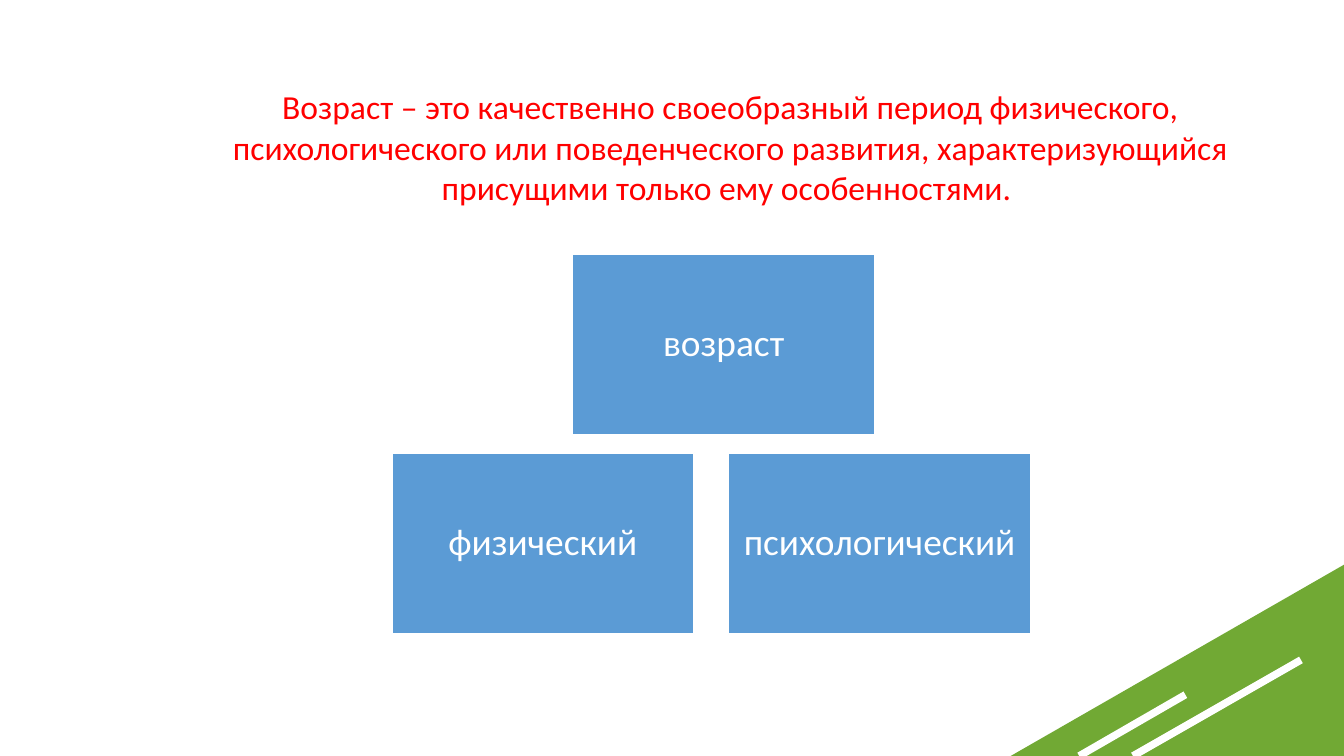
from dataclasses import dataclass

from lxml import etree
from pptx import Presentation
from pptx.dml.color import RGBColor
from pptx.enum.shapes import MSO_CONNECTOR, MSO_SHAPE
from pptx.enum.text import MSO_ANCHOR, PP_ALIGN
from pptx.oxml.ns import qn
from pptx.util import Inches, Pt

RECT, TRIANGLE = MSO_SHAPE.RECTANGLE, MSO_SHAPE.RIGHT_TRIANGLE
STRAIGHT = MSO_CONNECTOR.STRAIGHT
CENTER = PP_ALIGN.CENTER
TOP, MIDDLE = MSO_ANCHOR.TOP, MSO_ANCHOR.MIDDLE

WIDTH = Inches(10)
HEIGHT = WIDTH * 9 // 16
COL, ROW = WIDTH / 100, HEIGHT / 100
WHITE, GREEN, BLUE, RED = "FFFFFF", "71A934", "5B9BD5", "FF0000"
FONT = "Calibri"
DEFINITION = (
    "Возраст – это качественно своеобразный период физического, "
    "психологического или поведенческого развития, характеризующийся "
    "присущими только ему особенностями. "
)


@dataclass(frozen=True)
class Box:
    """An area in columns and rows of the slide grid."""

    col: float
    row: float
    cols: float
    rows: float

    def emu(self) -> tuple[int, int, int, int]:
        """Return left, top, width and height in EMU."""
        return (int(self.col * COL), int(self.row * ROW),
                int(self.cols * COL), int(self.rows * ROW))


@dataclass(frozen=True)
class Stripe:
    """A diagonal line between two grid points."""

    col1: float
    row1: float
    col2: float
    row2: float


@dataclass(frozen=True)
class Block:
    """A labelled block of the age diagram."""

    label: str
    col: float
    row: float


STRIPES = (Stripe(80.3, 100, 88.2, 91.9), Stripe(84.3, 100, 96.8, 87.3))
BLOCK_COLS, BLOCK_ROWS = 22.5, 24
BLOCKS = (
    Block("физический", 29.15, 59.9),
    Block("возраст", 42.6, 33.6),
    Block("психологический", 54.2, 59.9),
)


def rgb(value: str) -> RGBColor:
    """Turn a hex string into a colour."""
    return RGBColor.from_string(value)


def add_shape(s, kind, box: Box, fill: str, line: str | None = None):
    """Draw a filled preset shape without shadow."""
    sp = s.shapes.add_shape(kind, *box.emu())
    sp.shadow.inherit = False
    sp.fill.solid()
    sp.fill.fore_color.rgb = rgb(fill)
    if line:
        sp.line.color.rgb = rgb(line)
        sp.line.width = Pt(1)
    else:
        sp.line.fill.background()
    return sp


def add_stripe(s, stripe: Stripe) -> None:
    """Draw a white diagonal stripe."""
    cx = s.shapes.add_connector(
        STRAIGHT, int(stripe.col1 * COL), int(stripe.row1 * ROW),
        int(stripe.col2 * COL), int(stripe.row2 * ROW))
    cx.line.color.rgb = rgb(WHITE)
    cx.line.width = Pt(4)
    etree.SubElement(cx._element.spPr, qn("a:effectLst"))


def write(sp, text: str, *, size: float, color: str, anchor=TOP,
          inset: float = 0.1, top: float = 0.05, spacing: float = 1.0) -> None:
    """Put one centred paragraph into a shape."""
    tf = sp.text_frame
    tf.word_wrap = True
    tf.vertical_anchor = anchor
    tf.margin_left = tf.margin_right = Inches(inset)
    tf.margin_top = Inches(top)
    tf.margin_bottom = Inches(min(top, inset))
    p = tf.paragraphs[0]
    p.alignment = CENTER
    p.line_spacing = spacing
    r = p.add_run()
    r.text = text
    r.font.name = FONT
    r.font.size = Pt(size)
    r.font.color.rgb = rgb(color)


def add_corner(s) -> None:
    """Draw the striped green corner."""
    sp = add_shape(s, TRIANGLE, Box(75.2, 74.7, 24.8, 25.3), GREEN)
    sp._element.spPr.xfrm.set("flipH", "1")
    for stripe in STRIPES:
        add_stripe(s, stripe)


def add_block(s, block: Block) -> None:
    """Draw one block of the diagram with its label."""
    box = Box(block.col, block.row, BLOCK_COLS, BLOCK_ROWS)
    sp = add_shape(s, RECT, box, BLUE, WHITE)
    write(sp, block.label, size=20, color=WHITE, anchor=MIDDLE,
          inset=0.08, top=0.08, spacing=0.9)


def main() -> None:
    """Build the slide and save it."""
    prs = Presentation()
    prs.slide_width, prs.slide_height = WIDTH, HEIGHT
    s = prs.slides.add_slide(prs.slide_layouts[6])
    add_corner(s)
    title = s.shapes.add_textbox(*Box(13, 5.2, 82.7, 28.8).emu())
    write(title, DEFINITION, size=18, color=RED, top=0.35)
    for block in BLOCKS:
        add_block(s, block)
    prs.save("out.pptx")


if __name__ == "__main__":
    main()
